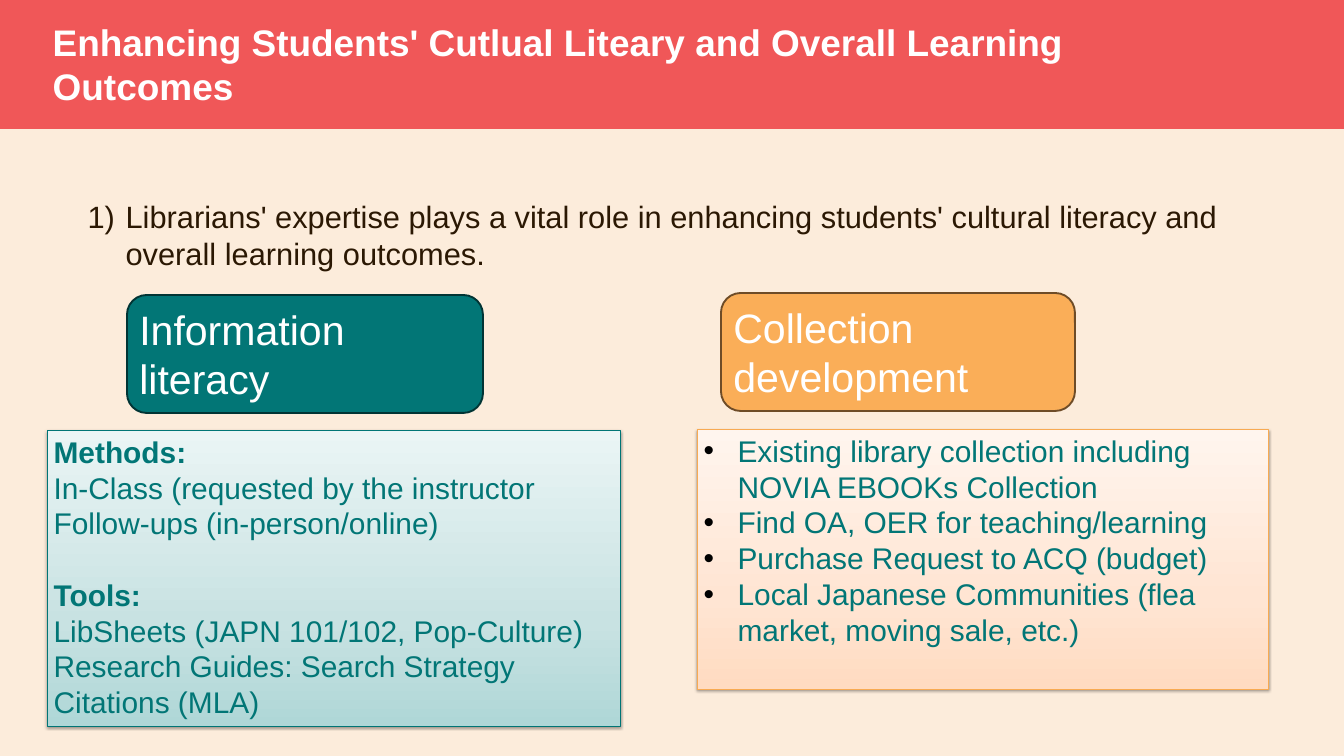
"""Build a slide on how librarians support cultural literacy and learning outcomes."""
from lxml import etree
from pptx import Presentation
from pptx.dml.color import RGBColor
from pptx.enum.shapes import MSO_SHAPE
from pptx.enum.text import MSO_ANCHOR, PP_ALIGN
from pptx.oxml import parse_xml
from pptx.oxml.ns import nsdecls
from pptx.util import Pt

RECT, ROUND = MSO_SHAPE.RECTANGLE, MSO_SHAPE.ROUNDED_RECTANGLE
TOP, MIDDLE, LEFT = MSO_ANCHOR.TOP, MSO_ANCHOR.MIDDLE, PP_ALIGN.LEFT
PX = 914400 / 67.2
COLORS = {
    "cream": "FCECDB", "coral": "F05758", "white": "FFFFFF", "brown": "2B1803",
    "teal": "027676", "teal_edge": "013434", "teal_line": "007575",
    "orange": "FAAE58", "orange_edge": "6E4C27", "orange_line": "F8AA52", "black": "000000",
}
GRADIENTS = {"teal": ("AFD7D7", "C8E2E2", "EAF5F5"), "orange": ("FFDBC1", "FFE5D3", "FFF5EE")}
STOPS = (0, 35000, 100000)


def write(tf, text, size=32, color="teal", bold=False, before=0, bullet=None, indent=0, hang=0):
    p = tf.paragraphs[0]
    if p.runs:
        p = tf.add_paragraph()
    p.alignment = LEFT
    if before:
        p.space_before = Pt(before)
    if bullet:
        pPr = p._p.get_or_add_pPr()
        pPr.set("marL", str(round(indent * PX)))
        pPr.set("indent", str(round(-hang * PX)))
        tag, key, value, mark = bullet
        pPr.append(parse_xml(f'<a:buClr {nsdecls("a")}><a:srgbClr val="{COLORS[mark]}"/></a:buClr>'))
        pPr.append(parse_xml(f'<a:buFont {nsdecls("a")} typeface="Arial"/>'))
        pPr.append(parse_xml(f'<a:{tag} {nsdecls("a")} {key}="{value}"/>'))
    r = p.add_run()
    r.text = text
    r.font.name, r.font.size, r.font.bold = "Arial", Pt(size), bold
    r.font.color.rgb = RGBColor.from_string(COLORS[color])


def add_box(kind, at, fill, line, width):
    sp = s.shapes.add_shape(kind, *(round(v * PX) for v in at))
    sp.shadow.inherit = False
    sp.fill.solid()
    sp.fill.fore_color.rgb = RGBColor.from_string(COLORS[fill])
    sp.line.color.rgb = RGBColor.from_string(COLORS[line])
    sp.line.width = Pt(width)
    sp.text_frame.word_wrap = True
    sp.text_frame.vertical_anchor = TOP
    return sp


prs = Presentation()
prs.slide_width, prs.slide_height = round(1344 * PX), round(756 * PX)
s = prs.slides.add_slide(prs.slide_layouts[5])
s.background.fill.solid()
s.background.fill.fore_color.rgb = RGBColor.from_string(COLORS["cream"])

title = s.shapes.title
band = add_box(RECT, (0, 0, 1344, 128), "coral", "coral", 2)
title._element.addprevious(band._element)
title.left, title.top, title.width, title.height = (round(v * PX) for v in (46, 22, 1064, 84))
title.text_frame.word_wrap = True
title.text_frame.vertical_anchor = MIDDLE
write(title.text_frame, "Enhancing Students' Cutlual Liteary and Overall Learning Outcomes",
      size=39.6, color="white", bold=True)

body = s.shapes.add_textbox(*(round(v * PX) for v in (79, 194, 1187, 470)))
body.text_frame.word_wrap = True
write(body.text_frame,
      "Librarians' expertise plays a vital role in enhancing students' cultural literacy "
      "and overall learning outcomes.",
      size=33, color="brown", bullet=("buAutoNum", "type", "arabicParenR", "brown"), indent=40, hang=38)

dot = {"bullet": ("buChar", "char", "•", "black"), "indent": 34, "hang": 34}
columns = [
    ("teal", "Information literacy", (127, 295, 356, 118), (47, 430, 573, 296), [
        ("Methods:", {"bold": True}),
        ("In-Class (requested by the instructor", {}),
        ("Follow-ups (in-person/online)", {}),
        ("Tools:", {"bold": True, "before": 38}),
        ("LibSheets (JAPN 101/102, Pop-Culture)", {}),
        ("Research Guides: Search Strategy", {}),
        ("Citations (MLA)", {}),
    ]),
    ("orange", "Collection development", (721, 293, 354, 118), (697, 429, 571, 260), [
        ("Existing library collection including NOVIA EBOOKs Collection", dot),
        ("Find OA, OER for teaching/learning", dot),
        ("Purchase Request to ACQ (budget)", dot),
        ("Local Japanese Communities (flea market, moving sale, etc.)", dot),
    ]),
]
for hue, heading, head_at, panel_at, lines in columns:
    head = add_box(ROUND, head_at, hue, f"{hue}_edge", 2)
    write(head.text_frame, heading, size=44, color="white")

    panel = add_box(RECT, panel_at, hue, f"{hue}_line", 0.75)
    panel.fill.gradient()
    panel.fill.gradient_angle = 90
    stops = panel._element.spPr.find(".//{*}gsLst")
    for old in list(stops):
        stops.remove(old)
    for pos, tint in zip(STOPS, GRADIENTS[hue]):
        stops.append(parse_xml(f'<a:gs {nsdecls("a")} pos="{pos}"><a:srgbClr val="{tint}"/></a:gs>'))
    panel._element.spPr.find(".//{*}lin").set("ang", "16200000")
    effects = panel._element.spPr.find("{*}effectLst")
    effects.append(etree.fromstring(
        f'<a:outerShdw {nsdecls("a")} blurRad="{Pt(3.1)}" dist="{Pt(1.6)}" dir="5400000" rotWithShape="0">'
        f'<a:srgbClr val="{COLORS["black"]}"><a:alpha val="38000"/></a:srgbClr></a:outerShdw>'))
    for text, fmt in lines:
        write(panel.text_frame, text, **fmt)

prs.save("out.pptx")
